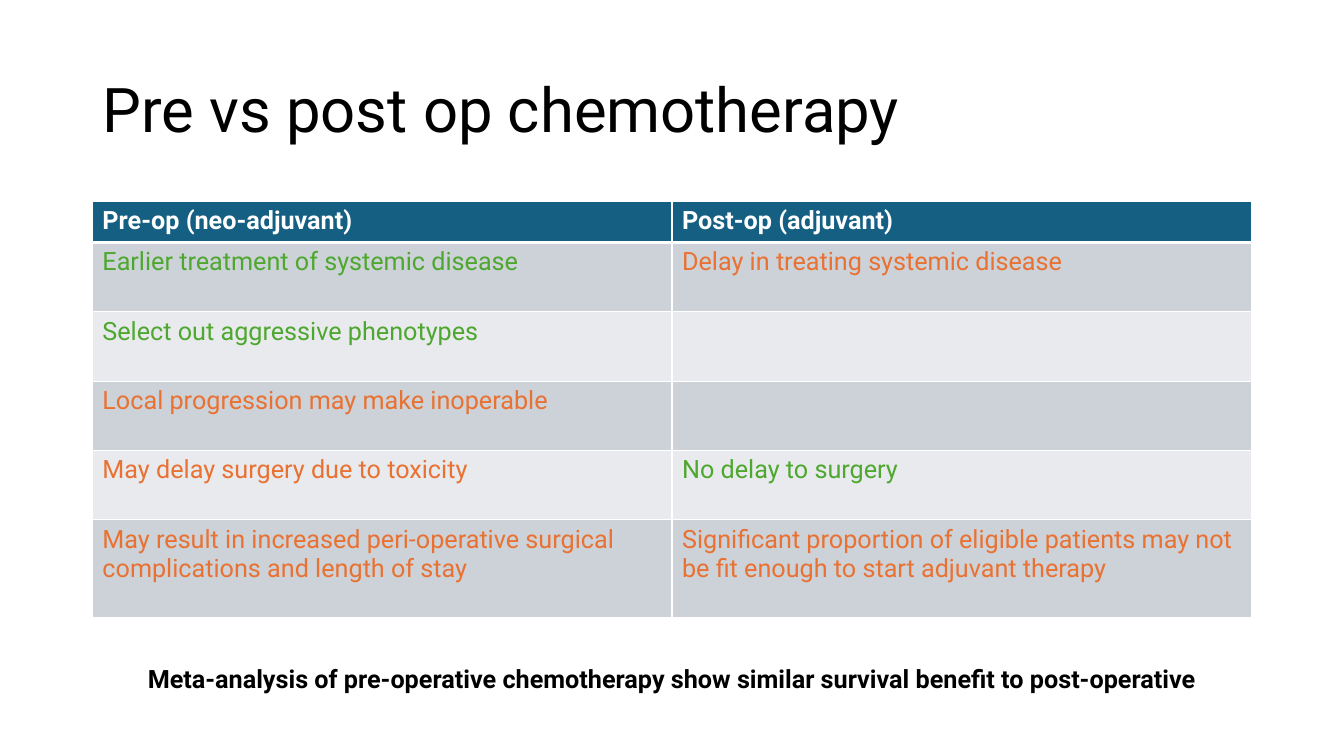
from dataclasses import dataclass

from lxml.etree import SubElement
from pptx import Presentation
from pptx.dml.color import RGBColor as Color
from pptx.enum.text import MSO_ANCHOR as Anchor, PP_ALIGN as Align
from pptx.oxml.ns import qn
from pptx.util import Emu, Pt

EMU_PER_PX = 9525


@dataclass(frozen=True)
class Theme:
    """Colours, typeface and type sizes of the slide."""
    font: str = "Roboto"
    title_size: int = 44
    body_size: int = 18
    text: str = "000000"
    white: str = "FFFFFF"
    header: str = "156082"
    bands: tuple = ("CCD2D8", "E8EAED")
    benefit: str = "4EA72E"
    drawback: str = "E97132"
    rule: int = 1
    header_rule: int = 3


THEME = Theme()
HEADINGS = ("Pre-op (neo-adjuvant)", "Post-op (adjuvant)")
COMPARISON = [
    (("Earlier treatment of systemic disease", THEME.benefit),
     ("Delay in treating systemic disease", THEME.drawback)),
    (("Select out aggressive phenotypes", THEME.benefit), None),
    (("Local progression may make inoperable", THEME.drawback), None),
    (("May delay surgery due to toxicity", THEME.drawback),
     ("No delay to surgery", THEME.benefit)),
    (("May result in increased peri-operative surgical complications and length of stay",
      THEME.drawback),
     ("Significant proportion of eligible patients may not be fit enough to start adjuvant therapy",
      THEME.drawback)),
]
HEADER_HEIGHT, ROW_HEIGHT, LAST_ROW_HEIGHT = 39, 66, 93


def px(length):
    """Turn whole pixels into EMU."""
    return Emu(length * EMU_PER_PX)


def apply_format(target, values):
    """Set each named attribute of the target."""
    for name, value in values.items():
        setattr(target, name, value)


def write_text(frame, text, size, color, bold=False):
    """Write one formatted run and return its paragraph."""
    paragraph = frame.paragraphs[0]
    run = paragraph.add_run()
    run.text = text
    apply_format(run.font, {"name": THEME.font, "size": Pt(size), "bold": bold})
    run.font.color.rgb = Color.from_string(color)
    return paragraph


def add_text(slide, box, text, size, paragraph_format, bold=False, anchor=Anchor.TOP):
    """Place a wrapping text box in the given box."""
    frame = slide.shapes.add_textbox(*map(px, box)).text_frame
    apply_format(frame, {"word_wrap": True, "vertical_anchor": anchor})
    paragraph = write_text(frame, text, size, THEME.text, bold)
    apply_format(paragraph, paragraph_format)


def set_borders(cell, top, bottom):
    """Give a cell white borders with its own top and bottom widths."""
    properties = cell._tc.get_or_add_tcPr()
    widths = {"lnL": THEME.rule, "lnR": THEME.rule, "lnT": top, "lnB": bottom}
    for side, width in widths.items():
        line = SubElement(properties, qn(f"a:{side}"), w=str(Pt(width)))
        fill = SubElement(line, qn("a:solidFill"))
        SubElement(fill, qn("a:srgbClr"), val=THEME.white)


def fill_cell(cell, row, entry):
    """Style a cell by its row and write its entry, if any."""
    set_borders(cell,
                THEME.header_rule if row == 1 else THEME.rule,
                THEME.header_rule if row == 0 else THEME.rule)
    background = THEME.bands[(row - 1) % 2] if row else THEME.header
    cell.fill.solid()
    cell.fill.fore_color.rgb = Color.from_string(background)
    if entry:
        text, color = entry
        write_text(cell.text_frame, text, THEME.body_size, color, bold=row == 0)


def add_comparison(slide, box):
    """Place the two-column comparison table in the given box."""
    rows = [[(heading, THEME.white) for heading in HEADINGS], *COMPARISON]
    heights = [HEADER_HEIGHT, *[ROW_HEIGHT] * (len(rows) - 2), LAST_ROW_HEIGHT]
    table = slide.shapes.add_table(len(rows), len(HEADINGS), *map(px, box)).table
    for column in table.columns:
        column.width = px(box[2] // len(HEADINGS))
    for row, (entries, height) in enumerate(zip(rows, heights)):
        table.rows[row].height = px(height)
        for column, entry in enumerate(entries):
            fill_cell(table.cell(row, column), row, entry)


def main():
    """Build the slide and save it."""
    presentation = Presentation()
    apply_format(presentation, {"slide_width": px(1280), "slide_height": px(720)})
    slide = presentation.slides.add_slide(presentation.slide_layouts[6])
    left, width = 88, 1104
    add_text(slide, (left, 38, width, 139), "Pre vs post op chemotherapy",
             THEME.title_size, {"line_spacing": 0.9}, anchor=Anchor.MIDDLE)
    add_comparison(slide, (left, 192, width, 396))
    add_text(slide, (left, 627, width, 39),
             "Meta-analysis of pre-operative chemotherapy show similar survival benefit to post-operative",
             THEME.body_size, {"alignment": Align.CENTER}, bold=True)
    presentation.save("out.pptx")


if __name__ == "__main__":
    main()
